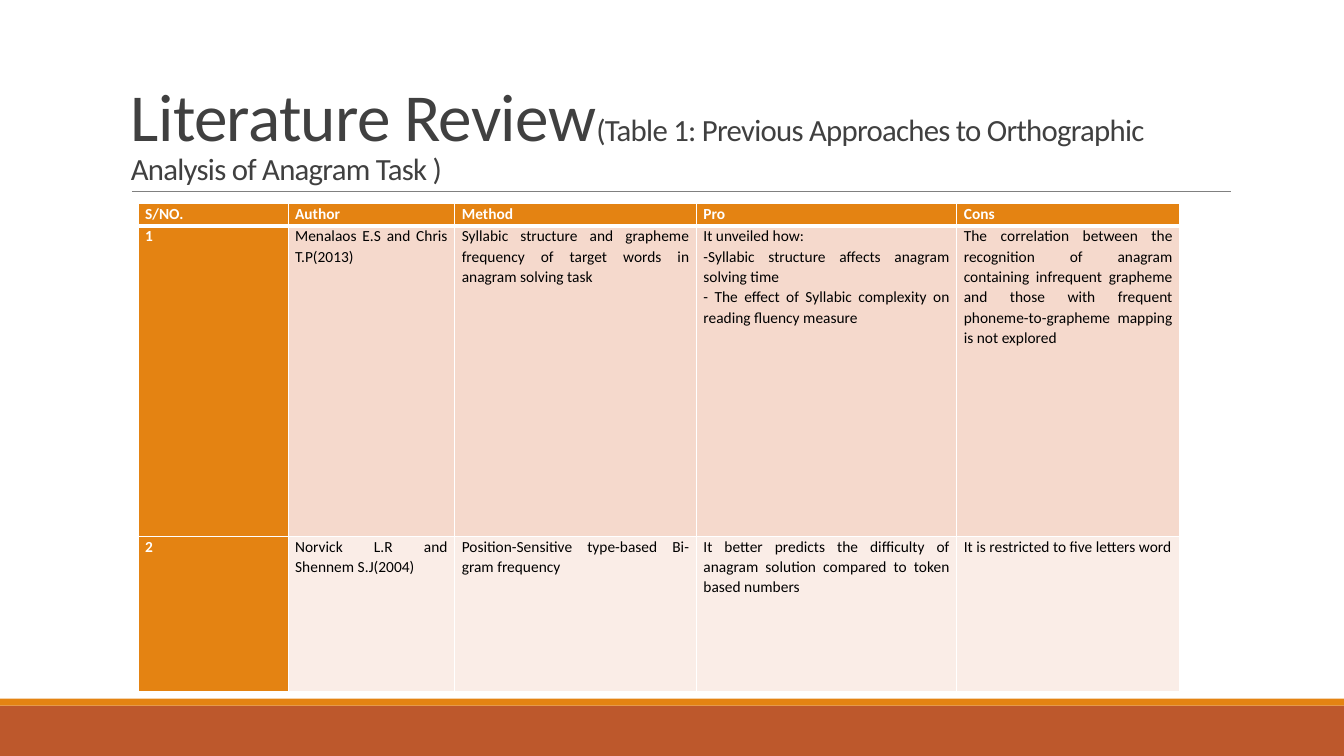
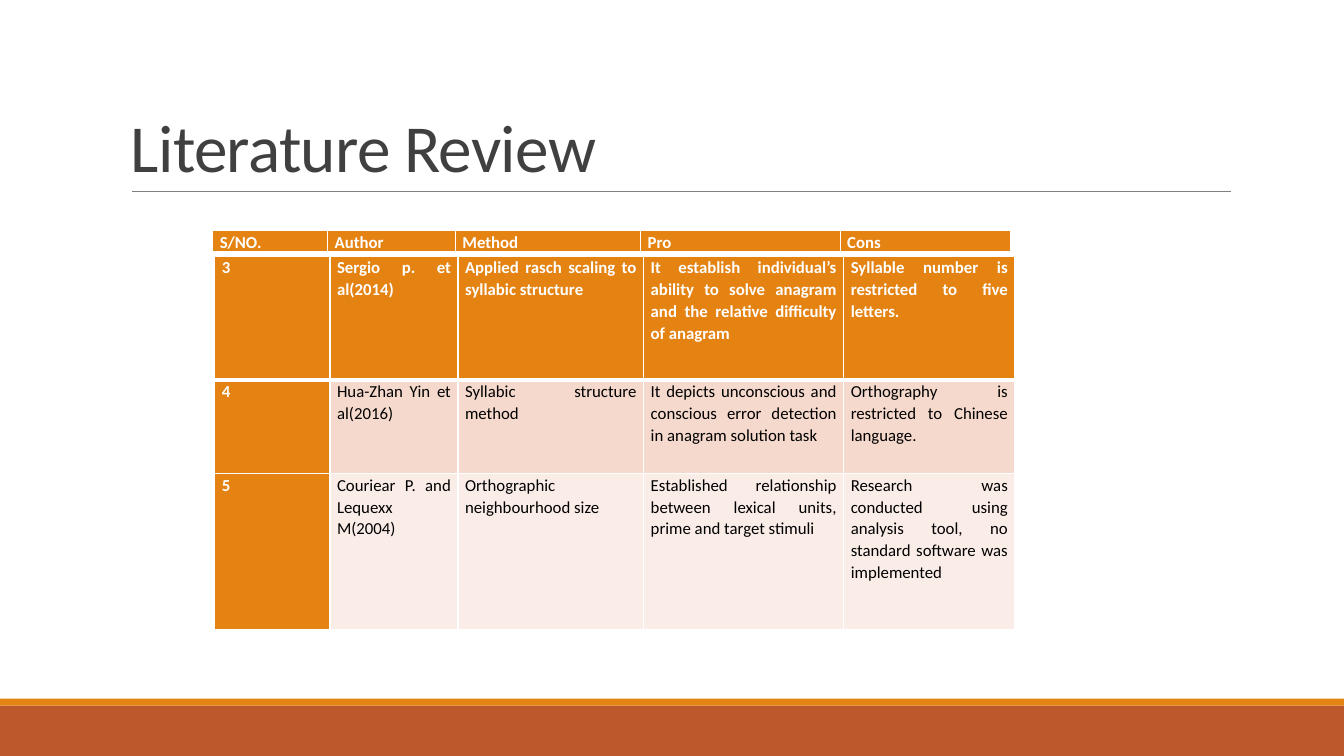
from dataclasses import dataclass

from lxml.etree import SubElement
from pptx import Presentation
from pptx.dml.color import RGBColor
from pptx.enum.shapes import MSO_CONNECTOR as Connector, MSO_SHAPE as Preset
from pptx.enum.text import MSO_ANCHOR as Anchor, PP_ALIGN as Align
from pptx.oxml.ns import qn
from pptx.slide import Slide
from pptx.table import _Cell as Cell
from pptx.util import Emu, Inches, Pt


@dataclass(frozen=True)
class Theme:
    font: str = "Calibri"
    accent: str = "E48312"
    base: str = "BD582C"
    title: str = "404040"
    rule: str = "808080"
    light: str = "FFFFFF"
    dark: str = "000000"
    tints: tuple[str, str] = ("F5D9CC", "FAEDE7")
    title_size: int = 48
    caption_size: int = 22
    rule_width: float = 0.5
    border: int = 1
    heading_border: int = 3
    line_spacing: float = 1.07


@dataclass(frozen=True)
class Band:
    top: float
    height: float
    color: str


@dataclass(frozen=True)
class ReviewTable:
    """Place and row heights are percentages of the slide's size."""
    left: float
    top: float
    width: float
    row_heights: tuple[float, ...]
    text_size: int
    rows: tuple[tuple[str, ...], ...]


@dataclass(frozen=True)
class ReviewSlide:
    title: str
    caption: str
    tables: tuple[ReviewTable, ...]


THEME = Theme()
WIDTH, HEIGHT = Inches(13.333), Inches(7.5)
COLUMN_SHARES = (0.144, 0.16, 0.232, 0.25, 0.214)
BANDS = (Band(93.33, 6.67, THEME.base), Band(92.4, 0.93, THEME.accent))
HEADINGS = ("S/NO.", "Author", "Method", "Pro", "Cons")

# Slide content
SLIDES = (
    ReviewSlide(
        "Literature Review",
        "(Table 1: Previous Approaches to Orthographic Analysis of Anagram Task )",
        (ReviewTable(10.28, 26.93, 77.51, (2.93, 41.07, 20.53), 11, (
            HEADINGS,
            ("1", "Menalaos E.S and Chris T.P(2013)",
             "Syllabic structure and grapheme frequency of target words in "
             "anagram solving task",
             "It unveiled how:\n"
             "-Syllabic structure affects anagram solving time\n"
             "- The effect of Syllabic complexity on reading fluency measure",
             "The correlation between the recognition of anagram containing "
             "infrequent grapheme and those with frequent "
             "phoneme-to-grapheme mapping is not explored"),
            ("2", "Norvick L.R and Shennem S.J(2004)",
             "Position-Sensitive type-based Bi-gram frequency",
             "It better predicts the difficulty of anagram solution compared "
             "to token based numbers",
             "It is restricted to five letters word"),
        )),),
    ),
    ReviewSlide(
        "Literature Review",
        "",
        (
            ReviewTable(15.83, 30.53, 59.4, (1.2,), 12, (HEADINGS,)),
            ReviewTable(15.98, 33.87, 59.55, (16.4, 12.4, 20.67), 12, (
                ("3", "Sergio p. et al(2014)",
                 "Applied rasch scaling to syllabic structure",
                 "It establish individual’s ability to solve anagram and the "
                 "relative difficulty of anagram",
                 "Syllable number is restricted to five letters."),
                ("4", "Hua-Zhan Yin et al(2016)",
                 "Syllabic structure method",
                 "It depicts unconscious and conscious error detection in "
                 "anagram solution task",
                 "Orthography is restricted to Chinese language."),
                ("5", "Couriear P. and Lequexx M(2004)",
                 "Orthographic neighbourhood size",
                 "Established relationship between lexical units, prime and "
                 "target stimuli",
                 "Research was conducted using analysis tool, no standard "
                 "software was implemented"),
            )),
        ),
    ),
)


def across(percent: float) -> Emu:
    return Emu(round(WIDTH * percent / 100))


def down(percent: float) -> Emu:
    return Emu(round(HEIGHT * percent / 100))


def apply_format(target: object, values: dict[str, object]) -> None:
    for name, value in values.items():
        setattr(target, name, value)


def format_font(font: object, size: int, color: str, bold: bool = False) -> None:
    apply_format(font, {"name": THEME.font, "size": Pt(size), "bold": bold})
    font.color.rgb = RGBColor.from_string(color)


def draw_frame(slide: Slide) -> None:
    # Footer bands
    for band in BANDS:
        shape = slide.shapes.add_shape(
            Preset.RECTANGLE, 0, down(band.top), WIDTH, down(band.height))
        shape.shadow.inherit = False
        shape.fill.solid()
        shape.fill.fore_color.rgb = RGBColor.from_string(band.color)
        shape.line.fill.background()

    # Rule under the title
    rule = slide.shapes.add_connector(
        Connector.STRAIGHT, across(9.82), down(25.33), across(91.58), down(25.33))
    rule.line.width = Pt(THEME.rule_width)
    rule.line.color.rgb = RGBColor.from_string(THEME.rule)
    SubElement(rule._element.spPr, qn("a:effectLst"))


def draw_title(slide: Slide, title: str, caption: str) -> None:
    box = slide.shapes.add_textbox(
        across(9), down(4.13), across(82.5), down(21.2))
    apply_format(box.text_frame,
                 {"word_wrap": True, "vertical_anchor": Anchor.BOTTOM})
    paragraph = box.text_frame.paragraphs[0]
    paragraph.line_spacing = 0.85
    for text, size in ((title, THEME.title_size), (caption, THEME.caption_size)):
        if text:
            run = paragraph.add_run()
            run.text = text
            format_font(run.font, size, THEME.title)
            run._r.get_or_add_rPr().set("spc", "-50")


def set_borders(cell: Cell, top: int, bottom: int) -> None:
    properties = cell._tc.get_or_add_tcPr()
    widths = {"L": THEME.border, "R": THEME.border, "T": top, "B": bottom}
    for side, width in widths.items():
        line = SubElement(properties, qn(f"a:ln{side}"), w=str(Pt(width)))
        fill = SubElement(line, qn("a:solidFill"))
        SubElement(fill, qn("a:srgbClr"), val=THEME.light)


def fill_cell(cell: Cell, text: str, size: int, row: int, column: int) -> None:
    # The first row and first column carry the accent; body rows alternate
    strong = row == 0 or column == 0
    background = THEME.accent if strong else THEME.tints[(row - 1) % 2]
    set_borders(cell,
                THEME.heading_border if row == 1 else THEME.border,
                THEME.heading_border if row == 0 else THEME.border)
    cell.fill.solid()
    cell.fill.fore_color.rgb = RGBColor.from_string(background)
    apply_format(cell, {
        "margin_left": Inches(0.07), "margin_right": Inches(0.07),
        "margin_top": 0, "margin_bottom": 0, "text": text})
    for paragraph in cell.text_frame.paragraphs:
        apply_format(paragraph, {"alignment": Align.JUSTIFY,
                                 "line_spacing": THEME.line_spacing})
        for run in paragraph.runs:
            format_font(run.font, size,
                        THEME.light if strong else THEME.dark, strong)


def draw_table(slide: Slide, review: ReviewTable) -> None:
    table = slide.shapes.add_table(
        len(review.rows), len(COLUMN_SHARES), across(review.left),
        down(review.top), across(review.width),
        down(sum(review.row_heights))).table
    apply_format(table, {"first_row": False, "horz_banding": False})
    for column, share in zip(table.columns, COLUMN_SHARES):
        column.width = across(review.width * share)
    for row, height in zip(table.rows, review.row_heights):
        row.height = down(height)
    for row_index, texts in enumerate(review.rows):
        for column_index, text in enumerate(texts):
            fill_cell(table.cell(row_index, column_index), text,
                      review.text_size, row_index, column_index)


def main() -> None:
    presentation = Presentation()
    apply_format(presentation, {"slide_width": WIDTH, "slide_height": HEIGHT})
    blank = presentation.slide_layouts[6]
    for content in SLIDES:
        slide = presentation.slides.add_slide(blank)
        draw_frame(slide)
        draw_title(slide, content.title, content.caption)
        for review in content.tables:
            draw_table(slide, review)
    presentation.save("out.pptx")


if __name__ == "__main__":
    main()
